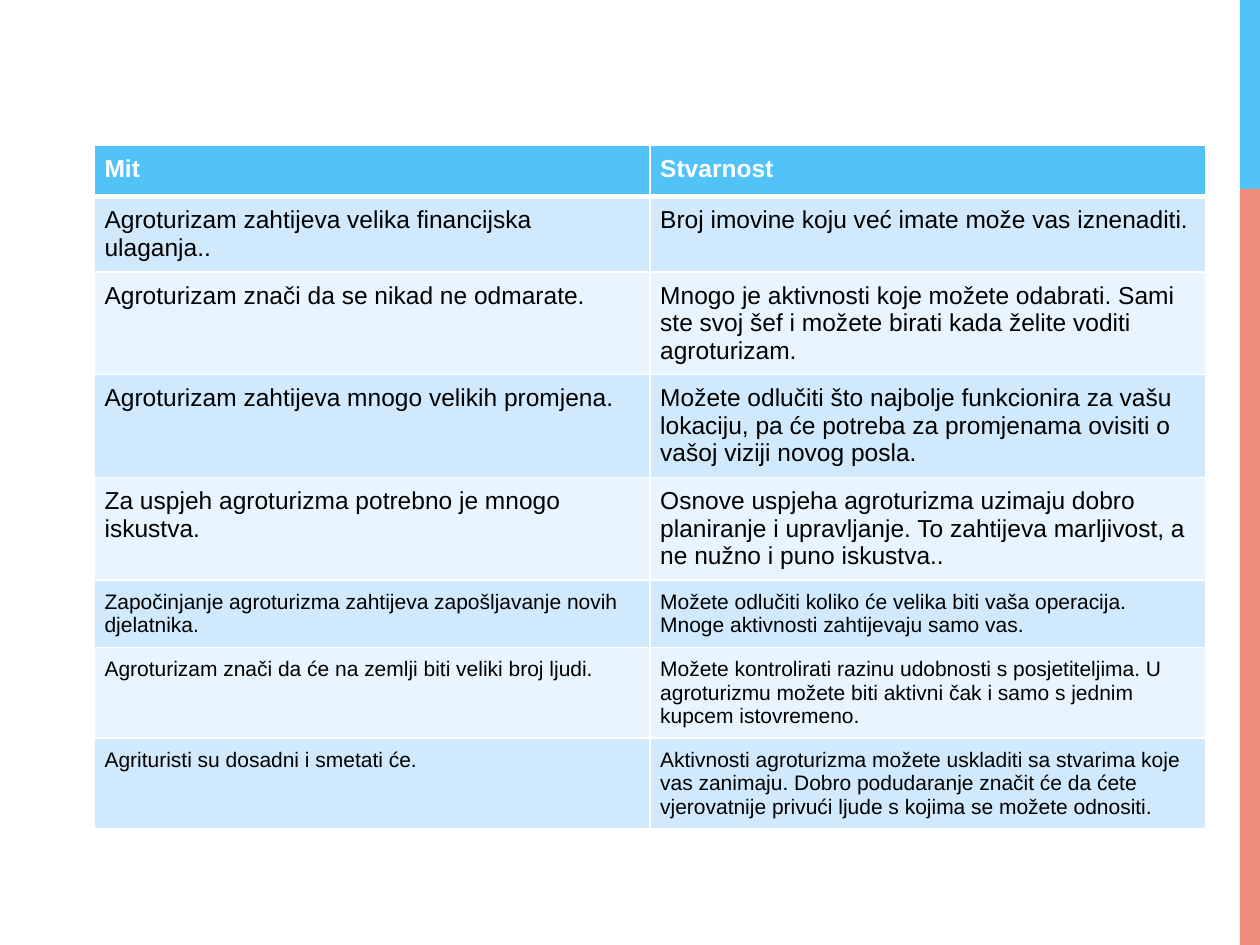
import pptx
import pptx.dml.color
import pptx.enum.shapes
import pptx.oxml
import pptx.oxml.ns
import pptx.util

Inches = pptx.util.Inches
Pt = pptx.util.Pt

COLORS = {
    "blue": "51C3F9",
    "coral": "EF8E7B",
    "band_dark": "D0E9FD",
    "band_light": "E9F5FE",
    "white": "FFFFFF",
    "black": "000000",
}

HEADER = ("Mit", "Stvarnost")
MYTHS = [
    ("Agroturizam zahtijeva velika financijska ulaganja..",
     "Broj imovine koju već imate može vas iznenaditi."),
    ("Agroturizam znači da se nikad ne odmarate.",
     "Mnogo je aktivnosti koje možete odabrati. Sami ste svoj šef i možete "
     "birati kada želite voditi agroturizam."),
    ("Agroturizam zahtijeva mnogo velikih promjena.",
     "Možete odlučiti što najbolje funkcionira za vašu lokaciju, pa će potreba "
     "za promjenama ovisiti o vašoj viziji novog posla."),
    ("Za uspjeh agroturizma potrebno je mnogo iskustva.",
     "Osnove uspjeha agroturizma uzimaju dobro planiranje i upravljanje. To "
     "zahtijeva marljivost, a ne nužno i puno iskustva.."),
    ("Započinjanje agroturizma zahtijeva zapošljavanje novih djelatnika.",
     "Možete odlučiti koliko će velika biti vaša operacija. Mnoge aktivnosti "
     "zahtijevaju samo vas."),
    ("Agroturizam znači da će na zemlji biti veliki broj ljudi.",
     "Možete kontrolirati razinu udobnosti s posjetiteljima. U agroturizmu "
     "možete biti aktivni čak i samo s jednim kupcem istovremeno."),
    ("Agrituristi su dosadni i smetati će.",
     "Aktivnosti agroturizma možete uskladiti sa stvarima koje vas zanimaju. "
     "Dobro podudaranje značit će da ćete vjerovatnije privući ljude s kojima "
     "se možete odnositi."),
]
LARGE_ROWS = 5  # the header and the first four myths use the larger text

SIDE_BARS = [("blue", 0, 1.5), ("coral", 1.5, 6)]  # colour, top, height
BAR_LEFT, BAR_WIDTH = 9.84, 0.16

TABLE_LEFT, TABLE_TOP, TABLE_WIDTH, TABLE_HEIGHT = 0.75, 1.15, 8.82, 5.74
ROW_HEIGHT = 0.41
CELL_MARGIN = 0.08


def rgb(name):
    return pptx.dml.color.RGBColor.from_string(COLORS[name])


def set_borders(cell, bottom_points, top_points):
    """Draw white cell borders; they must come before the fill in the XML."""
    properties = cell._tc.get_or_add_tcPr()
    widths = {"lnL": 1, "lnR": 1, "lnT": top_points, "lnB": bottom_points}
    for side, points in widths.items():
        properties.append(pptx.oxml.parse_xml(
            f'<a:{side} {pptx.oxml.ns.nsdecls("a")} w="{Pt(points)}">'
            f'<a:solidFill><a:srgbClr val="{COLORS["white"]}"/></a:solidFill>'
            f'</a:{side}>'))


def fill_cell(cell, text, row):
    is_header = row == 0
    set_borders(cell, 3 if is_header else 1, 3 if row == 1 else 1)
    band = "band_dark" if row % 2 else "band_light"
    cell.fill.solid()
    cell.fill.fore_color.rgb = rgb("blue" if is_header else band)
    cell.margin_left = cell.margin_right = Inches(CELL_MARGIN)
    cell.margin_top = cell.margin_bottom = Inches(CELL_MARGIN)
    cell.text_frame.text = text
    font = cell.text_frame.paragraphs[0].runs[0].font
    font.name = "Arial"
    font.size = Pt(14 if row < LARGE_ROWS else 12)
    font.bold = is_header
    font.color.rgb = rgb("white" if is_header else "black")


def add_side_bars(slide):
    for color, top, height in SIDE_BARS:
        bar = slide.shapes.add_shape(
            pptx.enum.shapes.MSO_SHAPE.RECTANGLE, Inches(BAR_LEFT), Inches(top),
            Inches(BAR_WIDTH), Inches(height))
        bar.shadow.inherit = False
        bar.fill.solid()
        bar.fill.fore_color.rgb = rgb(color)
        bar.line.fill.background()


def add_myth_table(slide):
    rows = [HEADER] + MYTHS
    frame = slide.shapes.add_table(
        len(rows), len(HEADER), Inches(TABLE_LEFT), Inches(TABLE_TOP),
        Inches(TABLE_WIDTH), Inches(ROW_HEIGHT * len(rows)))
    for row, texts in enumerate(rows):
        for column, text in enumerate(texts):
            fill_cell(frame.table.cell(row, column), text, row)
    frame.height = Inches(TABLE_HEIGHT)


def main():
    presentation = pptx.Presentation()
    presentation.slide_width = Inches(10)
    presentation.slide_height = Inches(7.5)
    slide = presentation.slides.add_slide(presentation.slide_layouts[6])
    add_side_bars(slide)
    add_myth_table(slide)
    presentation.save("out.pptx")


if __name__ == "__main__":
    main()
